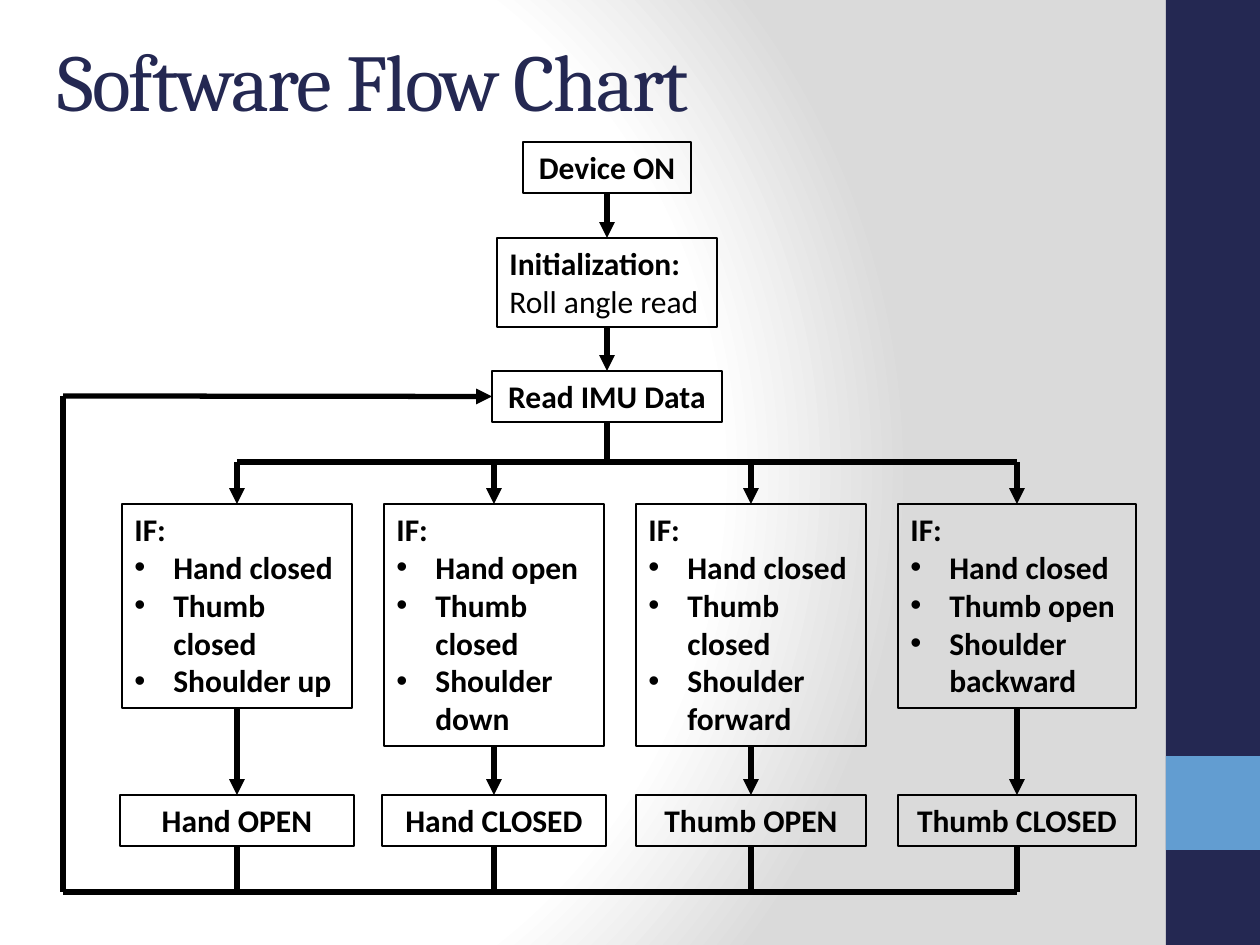
"""Build the Software Flow Chart slide."""
from lxml.etree import SubElement
from pptx import Presentation
from pptx.dml.color import RGBColor
from pptx.enum.shapes import MSO_CONNECTOR, MSO_SHAPE
from pptx.enum.text import MSO_ANCHOR, MSO_AUTO_SIZE, PP_ALIGN
from pptx.oxml import parse_xml
from pptx.oxml.ns import nsdecls, qn
from pptx.util import Inches, Pt

HUES = {"navy": "242852", "sky": "629DD1", "ink": "000000", "white": "FFFFFF", "gray": "DADADA"}
ROWS = {"bus": 462, "test": 504, "act": 795, "loop": 892}
HIGH, EDGE, MID = 51, 63, 607
BRANCHES = [
    (237, 230, 204, ["Hand closed", "Thumb closed", "Shoulder up"], 234, "Hand OPEN"),
    (494, 220, 242, ["Hand open", "Thumb closed", "Shoulder down"], 224, "Hand CLOSED"),
    (751, 230, 242, ["Hand closed", "Thumb closed", "Shoulder forward"], 230, "Thumb OPEN"),
    (1017, 238, 204, ["Hand closed", "Thumb open", "Shoulder backward"], 238, "Thumb CLOSED"),
]


def box(mid, top, wide, high, lines, align=PP_ALIGN.CENTER, plain=(), dots=()):
    area = [Inches(n / 126) for n in (mid - wide // 2, top, wide, high)]
    shape = slide.shapes.add_shape(MSO_SHAPE.RECTANGLE, *area)
    shape.shadow.inherit = False
    shape.fill.background()
    shape.line.color.rgb = RGBColor.from_string(HUES["ink"])
    shape.line.width = Pt(1.5)
    frame = shape.text_frame
    frame.word_wrap = True
    frame.auto_size = MSO_AUTO_SIZE.SHAPE_TO_FIT_TEXT
    frame.vertical_anchor = MSO_ANCHOR.TOP
    frame.text = "\n".join(lines)
    for para in frame.paragraphs:
        para.alignment = align
        para.font.name = "Calibri"
        para.font.size = Pt(18)
        para.font.bold = para.text not in plain
        para.font.color.rgb = RGBColor.from_string(HUES["ink"])
        if para.text in dots:
            props = para._p.get_or_add_pPr()
            props.set("marL", str(Inches(39 / 126)))
            props.set("indent", str(-Inches(39 / 126)))
            props.insert(0, parse_xml(f'<a:buFont {nsdecls("a")} typeface="Arial"/>'))
            props.insert(1, parse_xml(f'<a:buChar {nsdecls("a")} char="•"/>'))
    return shape


def link(x1, y1, x2, y2, start=None, end=None, side=0, arrow=False):
    ends = [Inches(n / 126) for n in (x1, y1, x2, y2)]
    line = slide.shapes.add_connector(MSO_CONNECTOR.STRAIGHT, *ends)
    if start:
        line.begin_connect(start, 2)
    if end:
        line.end_connect(end, side)
    line.line.color.rgb = RGBColor.from_string(HUES["ink"])
    line.line.width = Pt(3)
    if arrow:
        SubElement(line.line._get_or_add_ln(), qn("a:tailEnd"), type="triangle")
    SubElement(line._element.spPr, qn("a:effectLst"))


deck = Presentation()
deck.slide_width, deck.slide_height = Inches(1260 / 126), Inches(945 / 126)
slide = deck.slides.add_slide(deck.slide_layouts[6])

slide.background.fill.gradient()
grad = next(slide.element.iter(qn("a:gradFill")))
for child in list(grad):
    grad.remove(child)
stops = SubElement(grad, qn("a:gsLst"))
for place, hue in ((0, "white"), (75, "white"), (100, "gray")):
    stop = SubElement(stops, qn("a:gs"), pos=str(place * 1000))
    SubElement(stop, qn("a:srgbClr"), val=HUES[hue])
way = SubElement(grad, qn("a:path"), path="circle")
SubElement(way, qn("a:fillToRect"), l="20000", t="50000", r="100000", b="50000")

for top, high, hue in ((0, 945, "navy"), (756, 94, "sky")):
    area = [Inches(n / 126) for n in (1166, top, 94, high)]
    band = slide.shapes.add_shape(MSO_SHAPE.RECTANGLE, *area)
    band.shadow.inherit = False
    band.fill.solid()
    band.fill.fore_color.rgb = RGBColor.from_string(HUES[hue])
    band.line.fill.background()

title = slide.shapes.add_textbox(*[Inches(n / 126) for n in (45, 0, 1050, 158)])
frame = title.text_frame
frame.word_wrap = True
frame.vertical_anchor = MSO_ANCHOR.MIDDLE
frame.text = "Software Flow Chart"
head = frame.paragraphs[0]
head.font.name = "Cambria"
head.font.size = Pt(46)
head.font.color.rgb = RGBColor.from_string(HUES["navy"])
head.runs[0].font._element.set("spc", "-100")

power = box(MID, 142, 168, HIGH, ["Device ON"])
setup = box(MID, 238, 220, 89, ["Initialization:", "Roll angle read"], PP_ALIGN.LEFT, plain=["Roll angle read"])
read = box(MID, 371, 230, HIGH, ["Read IMU Data"])
link(MID, 193, MID, 238, power, setup, arrow=True)
link(MID, 327, MID, 371, setup, read, arrow=True)
link(MID, 422, MID, ROWS["bus"], read)

for mid, wide, high, tests, span, act in BRANCHES:
    test = box(mid, ROWS["test"], wide, high, ["IF:"] + tests, PP_ALIGN.LEFT, dots=tests)
    move = box(mid, ROWS["act"], span, HIGH, [act])
    link(mid, ROWS["bus"], mid, ROWS["test"], end=test, arrow=True)
    link(mid, ROWS["test"] + high, mid, ROWS["act"], test, move, arrow=True)
    link(mid, ROWS["act"] + HIGH, mid, ROWS["loop"], move)

first, last = BRANCHES[0][0], BRANCHES[-1][0]
link(first, ROWS["bus"], last, ROWS["bus"])
link(EDGE, ROWS["loop"], last, ROWS["loop"])
link(EDGE, ROWS["loop"], EDGE, 396)
link(EDGE, 396, 492, 396, end=read, side=1, arrow=True)

deck.save("out.pptx")
